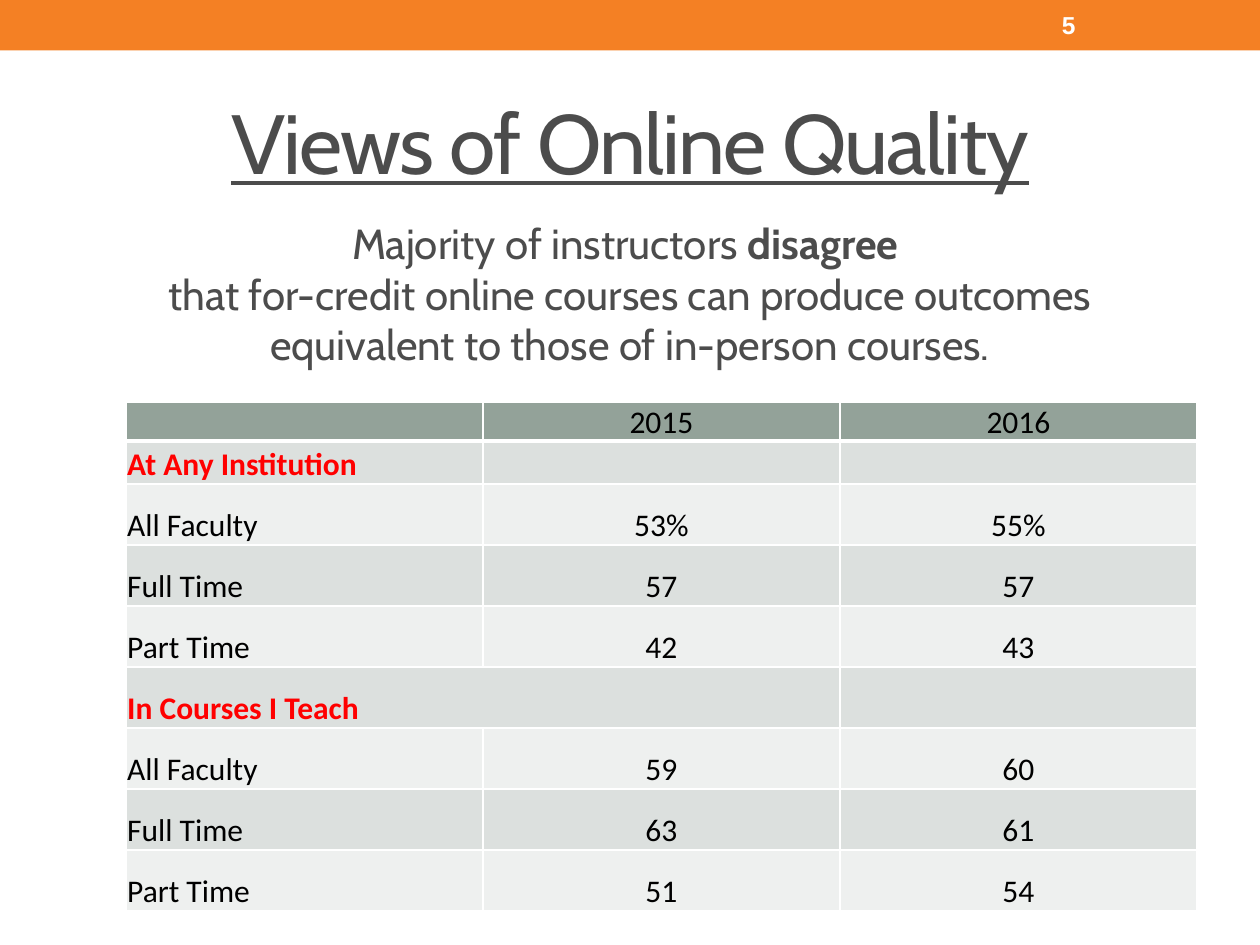
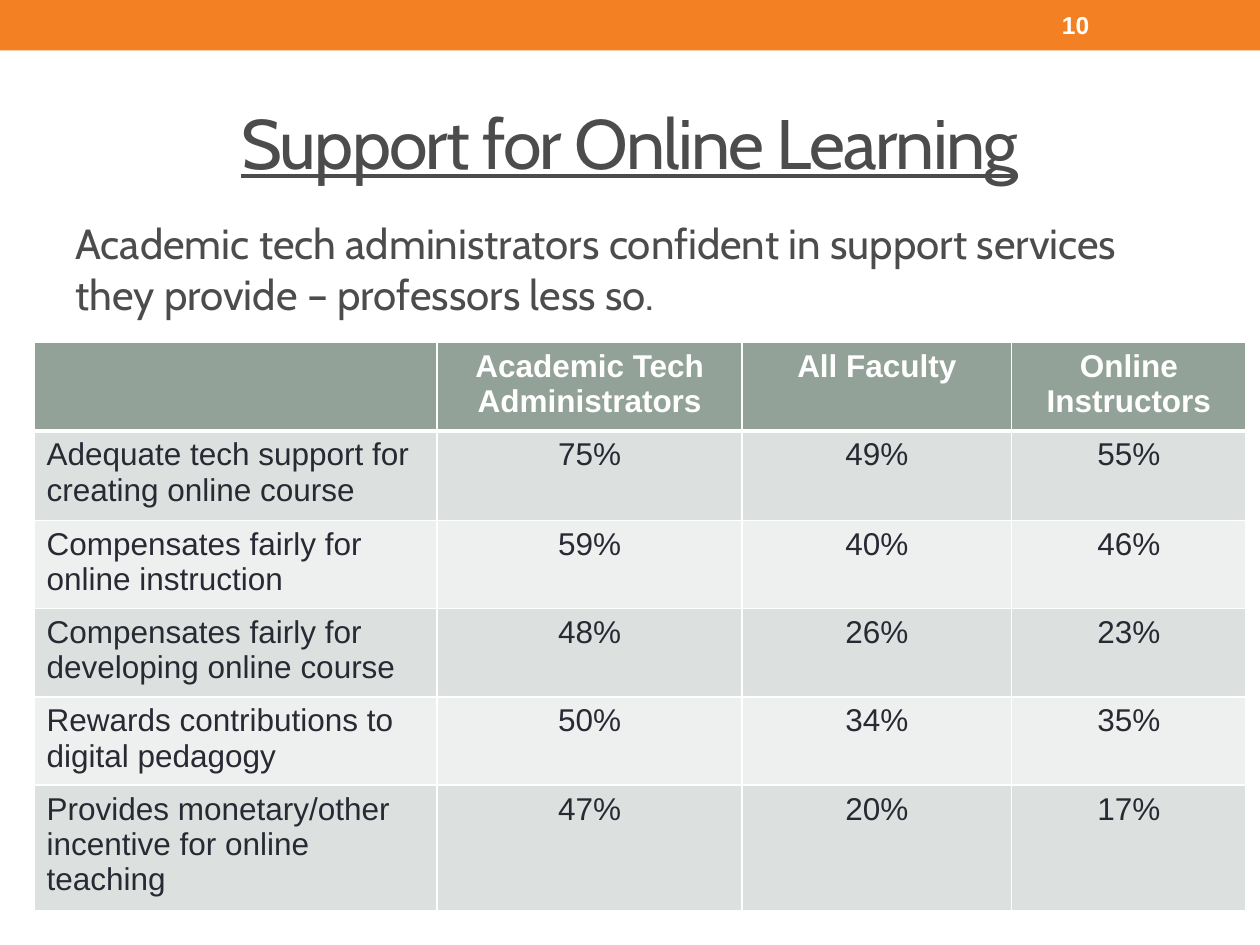
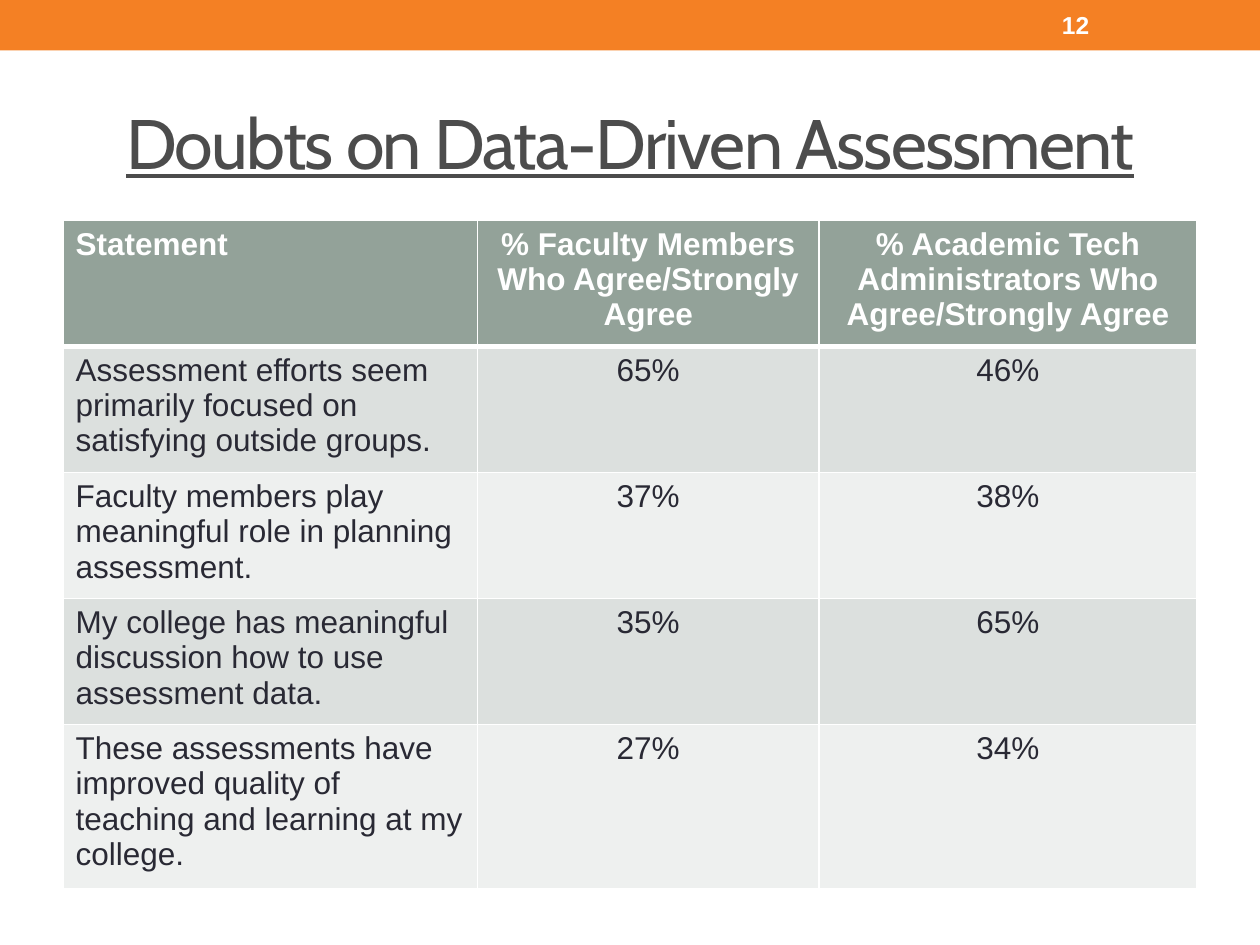
from typing import NamedTuple

from lxml.etree import SubElement
from pptx import Presentation
from pptx.dml.color import RGBColor
from pptx.enum.shapes import MSO_SHAPE as Preset
from pptx.enum.text import MSO_ANCHOR as Anchor, PP_ALIGN as Align
from pptx.oxml.ns import qn
from pptx.util import Inches, Pt

# Slide grid: 10 columns by 7.5 rows of square units
WIDTH, HEIGHT = Inches(10), Inches(7.5)
UNIT = WIDTH / 10

ORANGE = RGBColor(0xF4, 0x80, 0x24)
WHITE = RGBColor(0xFF, 0xFF, 0xFF)
BLACK = RGBColor(0, 0, 0)
RED = RGBColor(0xFF, 0, 0)
GRAY = RGBColor(0x4C, 0x4C, 0x4C)
INK = RGBColor(0x29, 0x29, 0x34)
SAGE = RGBColor(0x93, 0xA2, 0x99)
STRIPES = RGBColor(0xDC, 0xE0, 0xDE), RGBColor(0xEE, 0xF0, 0xEF)


class Box(NamedTuple):
    left: float
    top: float
    width: float
    height: float


class TableStyle(NamedTuple):
    font: str
    header_color: RGBColor
    header_bold: bool
    body_color: RGBColor
    anchor: Anchor
    insets: tuple  # left, top, right, bottom


BAND = Box(0, 0, 10, 0.4)
NUMBER = Box(8.33, 0.02, 1.17, 0.36)
TITLE = Box(0.5, 0.58, 9, 1.08)
BODY = Box(0.5, 1.68, 9, 1.5)

COMPACT = TableStyle("Calibri", BLACK, False, BLACK, Anchor.BOTTOM, (0.01, 0.01, 0.01, 0))
ROOMY = TableStyle("Arial", WHITE, True, INK, Anchor.TOP, (0.1, 0.05, 0.1, 0.05))


def units(count):
    return round(count * UNIT)


def place(box):
    return [units(value) for value in box]


def add_run(paragraph, text, font, size, color, bold=False):
    run = paragraph.add_run()
    run.text = text
    run.font.name = font
    run.font.size = Pt(size)
    run.font.color.rgb = color
    run.font.bold = bold
    return run


def add_text_box(slide, box, anchor=Anchor.TOP, align=Align.LEFT):
    frame = slide.shapes.add_textbox(*place(box)).text_frame
    frame.word_wrap = True
    frame.vertical_anchor = anchor
    paragraph = frame.paragraphs[0]
    paragraph.alignment = align
    return paragraph


def add_band(slide, box):
    band = slide.shapes.add_shape(Preset.RECTANGLE, *place(box))
    band.shadow.inherit = False
    band.fill.solid()
    band.fill.fore_color.rgb = ORANGE
    band.line.fill.background()


def add_title(slide, box, text, size):
    paragraph = add_text_box(slide, box, Anchor.MIDDLE, Align.CENTER)
    run = add_run(paragraph, text, "Cabin", size, GRAY)
    run.font.underline = True
    run._r.get_or_add_rPr().set("spc", "-100")


def add_body(slide, box, lines, align):
    """Each line is a list of (text, bold) runs."""
    paragraph = add_text_box(slide, box, align=align)
    paragraph.space_before = Pt(4.8)
    for index, line in enumerate(lines):
        if index:
            paragraph.add_line_break()
        for text, bold in line:
            add_run(paragraph, text, "Cabin", 24, GRAY, bold)


def start_slide(presentation, number, title, title_size):
    slide = presentation.slides.add_slide(presentation.slide_layouts[6])
    add_band(slide, BAND)
    add_title(slide, TITLE, title, title_size)
    add_run(add_text_box(slide, NUMBER, Anchor.MIDDLE), number, "Arial", 14, WHITE, True)
    return slide


def set_borders(cell, top, bottom):
    properties = cell._tc.get_or_add_tcPr()
    for side, points in (("L", 1), ("R", 1), ("T", top), ("B", bottom)):
        line = SubElement(properties, qn(f"a:ln{side}"), w=str(Pt(points)))
        fill = SubElement(line, qn("a:solidFill"))
        SubElement(fill, qn("a:srgbClr"), val=str(WHITE))


def fill_cell(cell, text, row, column, style, is_section):
    # Heavier rule between the header and the first body row
    set_borders(cell, 3 if row == 1 else 1, 3 if row == 0 else 1)
    cell.fill.solid()
    cell.fill.fore_color.rgb = STRIPES[(row - 1) % 2] if row else SAGE
    cell.vertical_anchor = style.anchor
    cell.margin_left, cell.margin_top, cell.margin_right, cell.margin_bottom = map(
        units, style.insets)
    if not text:
        return
    if is_section:
        color, bold = RED, True
    elif row == 0:
        color, bold = style.header_color, style.header_bold
    else:
        color, bold = style.body_color, False
    paragraph = cell.text_frame.paragraphs[0]
    paragraph.alignment = Align.CENTER if column else Align.LEFT
    add_run(paragraph, text, style.font, 18, color, bold)


def add_data_table(slide, left, top, widths, heights, rows, style):
    """A row with a label only is a section heading."""
    box = Box(left, top, sum(widths), sum(heights))
    table = slide.shapes.add_table(len(rows), len(widths), *place(box)).table
    table.horz_banding = False
    for column, width in zip(table.columns, widths):
        column.width = units(width)
    for row, height in zip(table.rows, heights):
        row.height = units(height)
    for row, texts in enumerate(rows):
        for column in range(len(widths)):
            text = texts[column] if column < len(texts) else ""
            fill_cell(table.cell(row, column), text, row, column, style, len(texts) == 1)
    return table


def build_quality_slide(presentation):
    slide = start_slide(presentation, "5", "Views of Online Quality", 48)
    add_body(slide, BODY, [
        [("Majority of instructors ", False), ("disagree ", True)],
        [("that for-credit online courses can produce outcomes equivalent to those "
          "of in-person courses.", False)],
    ], Align.CENTER)
    rows = [
        ("", "2015", "2016"),
        ("At Any Institution",),
        ("All Faculty", "53%", "55%"),
        ("Full Time", "57", "57"),
        ("Part Time", "42", "43"),
        ("In Courses I Teach",),
        ("All Faculty", "59", "60"),
        ("Full Time", "63", "61"),
        ("Part Time", "51", "54"),
    ]
    heights = [0.31, 0.34] + [3.39 / 7] * 7
    table = add_data_table(slide, 1, 3.19, [8.5 / 3] * 3, heights, rows, COMPACT)
    table.cell(5, 0).merge(table.cell(5, 1))


def build_support_slide(presentation):
    slide = start_slide(presentation, "10", "Support for Online Learning", 40)
    add_body(slide, BODY, [
        [("Academic tech administrators confident in support services they provide "
          "– professors less so.", False)],
    ], Align.LEFT)
    rows = [
        ("", "Academic Tech Administrators", "All Faculty", "Online Instructors"),
        ("Adequate tech support for creating online course", "75%", "49%", "55%"),
        ("Compensates fairly for online instruction", "59%", "40%", "46%"),
        ("Compensates fairly for developing online course", "48%", "26%", "23%"),
        ("Rewards contributions to digital pedagogy", "50%", "34%", "35%"),
        ("Provides monetary/other incentive for online teaching", "47%", "20%", "17%"),
    ]
    heights = [0.66, 0.71] + [0.66] * 3 + [0.94]
    add_data_table(slide, 0.27, 2.72, [3.2, 2.42, 2.14, 1.86], heights, rows, ROOMY)


def build_assessment_slide(presentation):
    slide = start_slide(presentation, "12", "Doubts on Data-Driven Assessment", 40)
    rows = [
        ("Statement", "% Faculty Members Who Agree/Strongly Agree",
         "% Academic Tech Administrators Who Agree/Strongly Agree"),
        ("Assessment efforts seem primarily focused on satisfying outside groups.",
         "65%", "46%"),
        ("Faculty members play meaningful role in planning assessment.", "37%", "38%"),
        ("My college has meaningful discussion how to use assessment data.",
         "35%", "65%"),
        ("These assessments have improved quality of teaching and learning at my college.",
         "27%", "34%"),
    ]
    heights = [0.94] * 4 + [1.22]
    add_data_table(slide, 0.5, 1.75, [3.29, 2.71, 3], heights, rows, ROOMY)


def main():
    presentation = Presentation()
    presentation.slide_width, presentation.slide_height = WIDTH, HEIGHT
    build_quality_slide(presentation)
    build_support_slide(presentation)
    build_assessment_slide(presentation)
    presentation.save("out.pptx")


if __name__ == "__main__":
    main()
